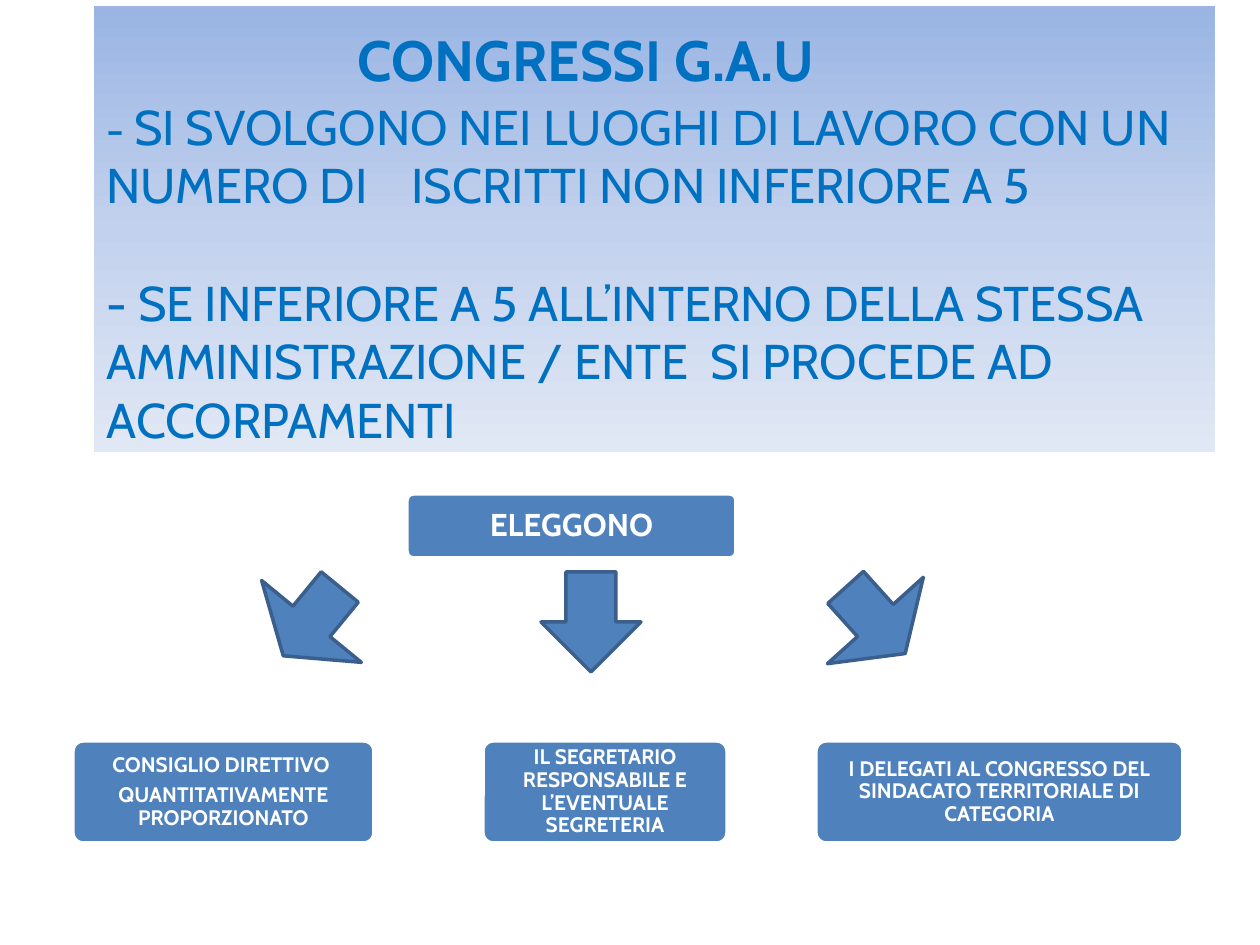
import copy

import pptx
import pptx.dml.color
import pptx.enum.shapes
import pptx.enum.text
import pptx.oxml
import pptx.oxml.ns
import pptx.util

RGBColor = pptx.dml.color.RGBColor
SHAPES = pptx.enum.shapes.MSO_SHAPE
ALIGN = pptx.enum.text.PP_ALIGN
ANCHOR = pptx.enum.text.MSO_ANCHOR

WHITE = RGBColor(0xFF, 0xFF, 0xFF)
BLUE = RGBColor(0x4F, 0x81, 0xBD)
DARK_BLUE = RGBColor(0x3A, 0x5F, 0x8C)
TEXT_BLUE = RGBColor(0x00, 0x70, 0xC0)
GRADIENT = [
    (0, RGBColor(0x9A, 0xB5, 0xE4)),
    (0.5, RGBColor(0xC2, 0xD1, 0xED)),
    (1, RGBColor(0xE1, 0xE8, 0xF5)),
]
FONT = "Cabin"
EMU_PER_PX = 914400 / 126

TITLE_BOX = (94, 6, 1121, 446)
TITLE_PARAGRAPHS = [
    {"runs": [("CONGRESSI G.A.U", 32.4, True)], "indent": 251, "tab": None, "before": 0},
    {"runs": [("- ", 24.3, False),
              ("SI SVOLGONO NEI LUOGHI DI LAVORO CON UN NUMERO DI\tISCRITTI NON INFERIORE A 5", 27.9, False)],
     "indent": 0, "tab": 305, "before": 2},
    {"runs": [("- SE INFERIORE A 5 ALL’INTERNO DELLA STESSA AMMINISTRAZIONE / ENTE\tSI PROCEDE AD ACCORPAMENTI",
               27.9, False)],
     "indent": 0, "tab": 604, "before": 33.5},
]

ELECTED_TOP, ELECTED_HEIGHT = 741, 102
ELECTED = [
    (73, 301, ["CONSIGLIO DIRETTIVO ", "QUANTITATIVAMENTE PROPORZIONATO"]),
    (483, 244, ["IL SEGRETARIO RESPONSABILE E L’EVENTUALE SEGRETERIA"]),
    (816, 367, ["I DELEGATI AL CONGRESSO DEL SINDACATO TERRITORIALE DI CATEGORIA"]),
]
BOXES = [((407, 494, 329, 64), 18, ["ELEGGONO"])] + [
    ((left, ELECTED_TOP, width, ELECTED_HEIGHT), 12, lines) for left, width, lines in ELECTED
]
ARROWS = [
    ((541, 572, 100, 100), 0, (0.5, 0.5)),
    ((247, 577, 129, 89), 39.4, (0.372, 0.5)),
    ((811, 576, 129, 89), 318, (0.372, 0.5)),
]


def px(value):
    return pptx.util.Emu(round(value * EMU_PER_PX))


def apply(target, **values):
    for name, value in values.items():
        setattr(target, name, value)


def place(shape, box):
    apply(shape, **dict(zip(("left", "top", "width", "height"), map(px, box))))


def add_run(paragraph, text, size, bold, color):
    run = paragraph.add_run()
    run.text = text
    apply(run.font, name=FONT, size=pptx.util.Pt(size), bold=bold)
    run.font.color.rgb = color


def add_shape(slide, kind, box, line_color, adjustments):
    shape = slide.shapes.add_shape(kind, *map(px, box))
    shape.shadow.inherit = False
    shape.fill.solid()
    shape.fill.fore_color.rgb = BLUE
    shape.line.color.rgb = line_color
    shape.line.width = pptx.util.Pt(2)
    for index, value in enumerate(adjustments):
        shape.adjustments[index] = value
    return shape


def fill_gradient(fill):
    fill.gradient()
    fill.gradient_angle = 270
    first = fill.gradient_stops[0]._gs
    first.addnext(copy.deepcopy(first))
    for stop, (position, color) in zip(fill.gradient_stops, GRADIENT):
        stop.color.rgb = color
        stop.position = position


def build_title(title):
    place(title, TITLE_BOX)
    fill_gradient(title.fill)
    frame = title.text_frame
    apply(frame, word_wrap=True, auto_size=pptx.enum.text.MSO_AUTO_SIZE.NONE,
          vertical_anchor=ANCHOR.TOP, margin_top=px(19), margin_bottom=0)
    for index, content in enumerate(TITLE_PARAGRAPHS):
        paragraph = frame.add_paragraph() if index else frame.paragraphs[0]
        apply(paragraph, alignment=ALIGN.LEFT, space_before=pptx.util.Pt(content["before"]))
        properties = paragraph._p.get_or_add_pPr()
        properties.set("marL", str(px(content["indent"])))
        if content["tab"]:
            properties.append(pptx.oxml.parse_xml(
                f'<a:tabLst {pptx.oxml.ns.nsdecls("a")}>'
                f'<a:tab pos="{px(content["tab"])}" algn="l"/></a:tabLst>'))
        for text, size, bold in content["runs"]:
            add_run(paragraph, text, size, bold, TEXT_BLUE)


def build_box(slide, box, size, lines):
    frame = add_shape(slide, SHAPES.ROUNDED_RECTANGLE, box, WHITE, [0.1]).text_frame
    apply(frame, word_wrap=True, vertical_anchor=ANCHOR.MIDDLE,
          margin_left=px(4), margin_right=px(4), margin_top=px(3), margin_bottom=px(3))
    for index, text in enumerate(lines):
        paragraph = frame.add_paragraph() if index else frame.paragraphs[0]
        apply(paragraph, alignment=ALIGN.CENTER, line_spacing=0.9,
              space_after=pptx.util.Pt(size * 0.35))
        add_run(paragraph, text, size, True, WHITE)


def main():
    presentation = pptx.Presentation()
    apply(presentation, slide_width=px(1260), slide_height=px(945))
    slide = presentation.slides.add_slide(presentation.slide_layouts[5])
    build_title(slide.shapes.title)
    for box, size, lines in BOXES:
        build_box(slide, box, size, lines)
    for box, rotation, adjustments in ARROWS:
        add_shape(slide, SHAPES.DOWN_ARROW, box, DARK_BLUE, adjustments).rotation = rotation
    presentation.save("out.pptx")


if __name__ == "__main__":
    main()
